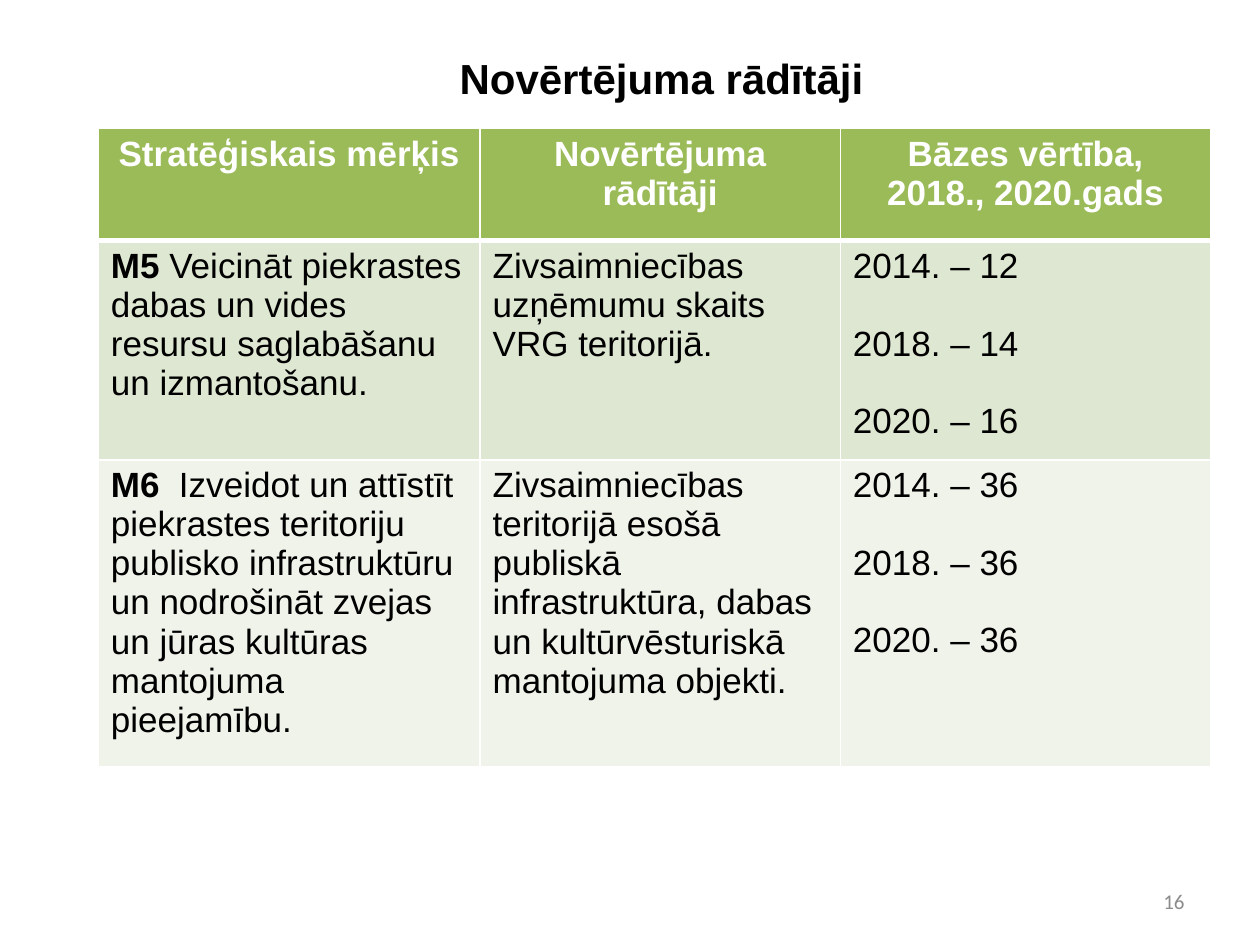
from lxml import etree
from pptx import Presentation
from pptx.dml.color import RGBColor
from pptx.enum.text import MSO_ANCHOR, PP_ALIGN
from pptx.oxml.ns import qn
from pptx.util import Inches, Pt

LEFT, CENTER, RIGHT = PP_ALIGN.LEFT, PP_ALIGN.CENTER, PP_ALIGN.RIGHT
MIDDLE = MSO_ANCHOR.MIDDLE
WHITE, BLACK, GREY = "FFFFFF", "000000", "8C8C8C"
HEADER_FILL, BAND_FILLS = "9BBB59", ("DEE7D1", "EFF3EA")
COL_WIDTHS = (3.03, 2.86, 2.94)
ROW_HEIGHTS = (0.89, 1.74, 2.26)
LINE_GAP = 22  # one line of 20 pt text

HEADER = ("Stratēģiskais mērķis", "Novērtējuma rādītāji",
          "Bāzes vērtība,\n2018., 2020.gads")
# goal code, goal, indicator, values by year
GOALS = (
    ("M5", " Veicināt piekrastes dabas un vides resursu saglabāšanu un izmantošanu.",
     "Zivsaimniecības uzņēmumu skaits VRG teritorijā.",
     "2014. – 12\n2018. – 14\n2020. – 16"),
    ("M6", "  Izveidot un attīstīt piekrastes teritoriju publisko infrastruktūru "
           "un nodrošināt zvejas un jūras kultūras mantojuma pieejamību.",
     "Zivsaimniecības teritorijā esošā publiskā infrastruktūra, dabas un "
     "kultūrvēsturiskā mantojuma objekti.",
     "2014. – 36\n2018. – 36\n2020. – 36"),
)


def rgb(color):
    return RGBColor.from_string(color)


def format_text(tf, size, color, bold=False, align=LEFT, font="Arial"):
    for p in tf.paragraphs:
        p.alignment = align
        for r in p.runs:
            r.font.name, r.font.size, r.font.bold = font, Pt(size), bold
            r.font.color.rgb = rgb(color)


def add_label(s, box, text, size, color, **style):
    tf = s.shapes.add_textbox(*(Inches(v) for v in box)).text_frame
    tf.word_wrap = True
    tf.vertical_anchor = MIDDLE
    tf.text = text
    format_text(tf, size, color, **style)


def set_borders(cell, bottom, top):
    tcPr = cell._tc.get_or_add_tcPr()
    widths = {"a:lnL": 1, "a:lnR": 1, "a:lnT": top, "a:lnB": bottom}
    for i, (tag, width) in enumerate(widths.items()):
        ln = etree.Element(qn(tag), w=str(Pt(width)))
        fill = etree.SubElement(ln, qn("a:solidFill"))
        etree.SubElement(fill, qn("a:srgbClr"), val=WHITE)
        tcPr.insert(i, ln)


def fill_cell(cell, text, fill, color, top=1, bottom=1, **style):
    cell.text_frame.text = text
    format_text(cell.text_frame, 20, color, **style)
    cell.fill.solid()
    cell.fill.fore_color.rgb = rgb(fill)
    set_borders(cell, bottom, top)


def add_goal_table(s, left, top):
    table = s.shapes.add_table(
        len(ROW_HEIGHTS), len(COL_WIDTHS), Inches(left), Inches(top),
        Inches(sum(COL_WIDTHS)), Inches(sum(ROW_HEIGHTS))).table
    for col, width in zip(table.columns, COL_WIDTHS):
        col.width = Inches(width)
    for row, height in zip(table.rows, ROW_HEIGHTS):
        row.height = Inches(height)

    for c, text in enumerate(HEADER):
        fill_cell(table.cell(0, c), text, HEADER_FILL, WHITE,
                  bottom=3, bold=True, align=CENTER)

    for i, (code, goal, indicator, values) in enumerate(GOALS, 1):
        for c, text in enumerate((code, indicator, values)):
            fill_cell(table.cell(i, c), text, BAND_FILLS[i - 1], BLACK,
                      top=3 if i == 1 else 1)
        tf = table.cell(i, 0).text_frame
        tf.paragraphs[0].add_run().text = goal
        format_text(tf, 20, BLACK)
        tf.paragraphs[0].runs[0].font.bold = True
        for p in table.cell(i, 2).text_frame.paragraphs[1:]:
            p.space_before = Pt(LINE_GAP)


def main():
    prs = Presentation()
    prs.slide_width, prs.slide_height = Inches(10), Inches(7.5)
    s = prs.slides.add_slide(prs.slide_layouts[6])
    add_label(s, (1, 0.3, 8.5, 0.64), "Novērtējuma rādītāji", 24, BLACK,
              bold=True, align=CENTER)
    add_goal_table(s, 0.78, 1.02)
    add_label(s, (7.17, 6.95, 2.33, 0.4), "16", 12, GREY,
              align=RIGHT, font="Calibri")
    prs.save("out.pptx")


if __name__ == "__main__":
    main()
